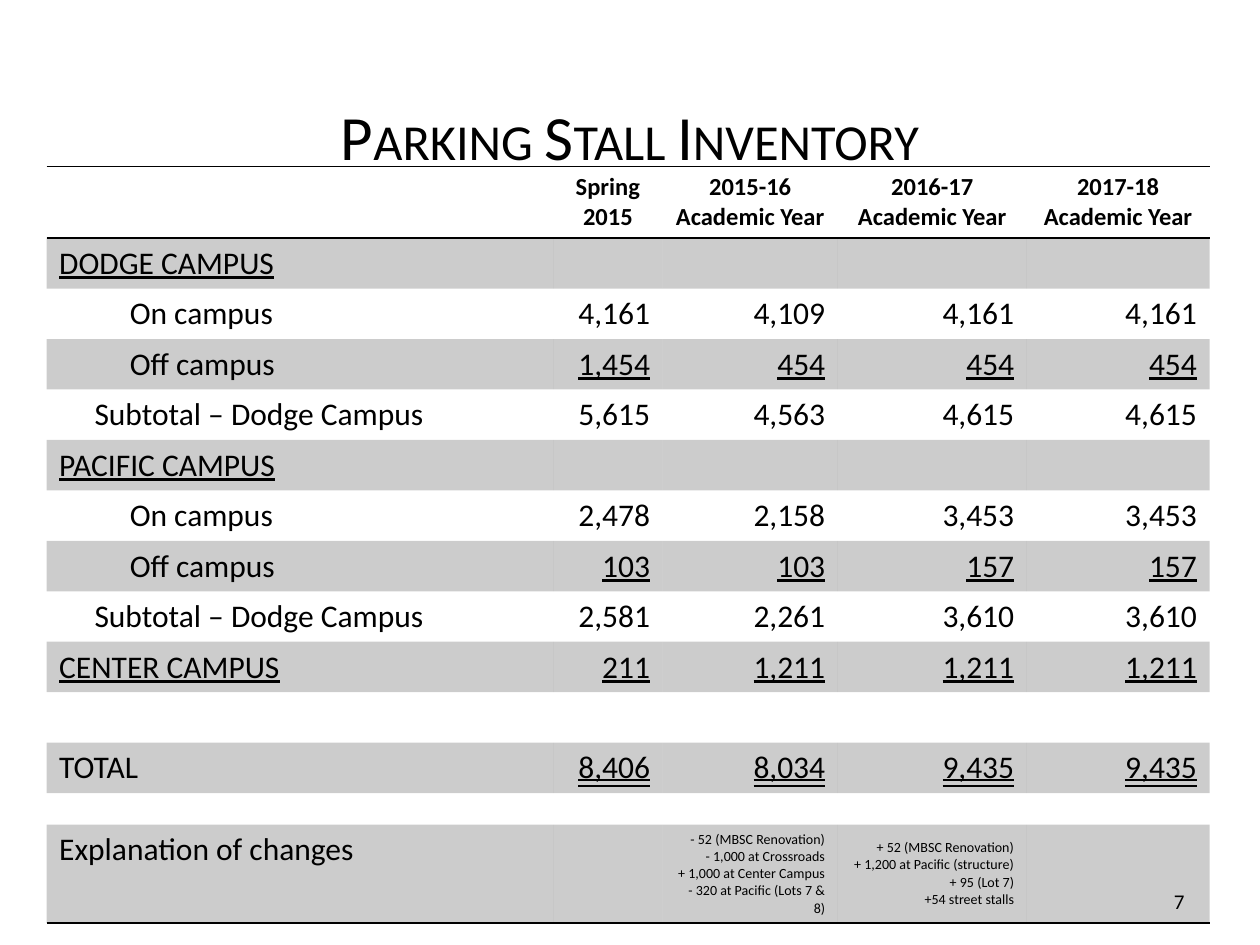
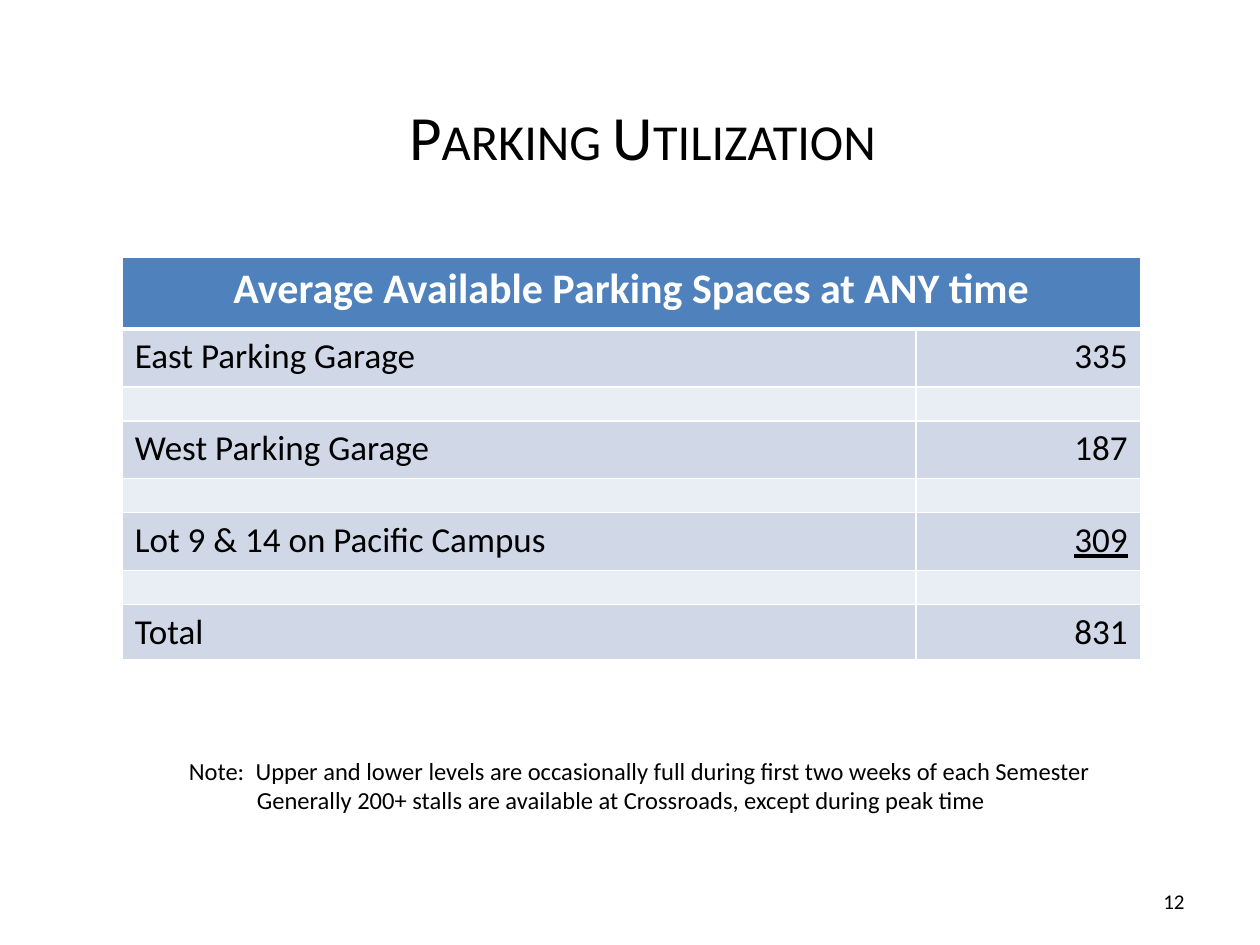
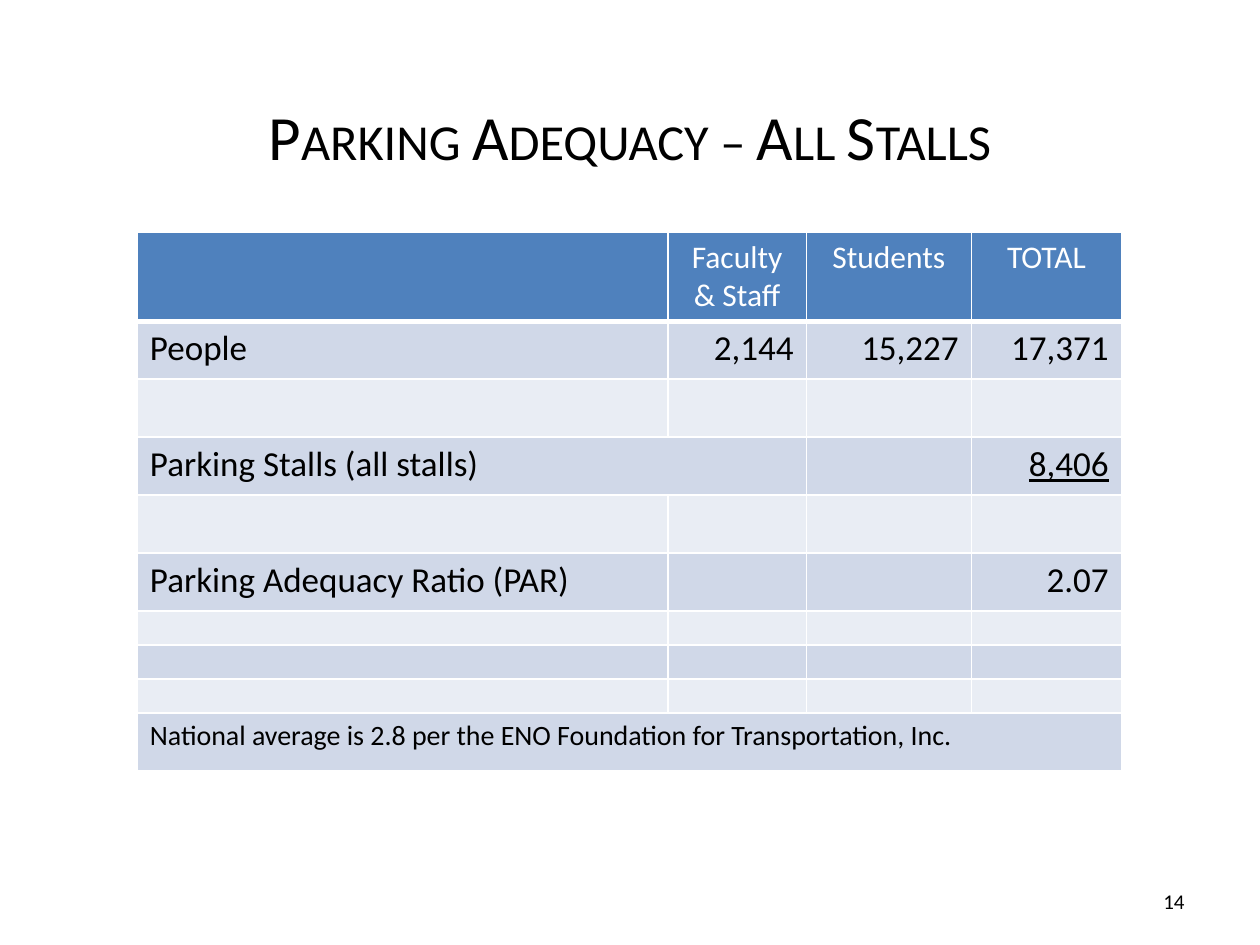
"""Build three slides on campus parking inventory, utilization and adequacy."""
import lxml.etree
import pptx
import pptx.dml.color
import pptx.enum.text
import pptx.oxml.ns
import pptx.util
from pptx.util import Inches

RGBColor = pptx.dml.color.RGBColor
Align = pptx.enum.text.PP_ALIGN
Anchor = pptx.enum.text.MSO_ANCHOR
Underline = pptx.enum.text.MSO_UNDERLINE
qn = pptx.oxml.ns.qn

BLACK = RGBColor(0x00, 0x00, 0x00)
WHITE = RGBColor(0xFF, 0xFF, 0xFF)
HEADER_BLUE = RGBColor(0x4F, 0x81, 0xBD)
BAND_DARK = RGBColor(0xD0, 0xD8, 0xE8)
BAND_LIGHT = RGBColor(0xE9, 0xED, 0xF4)
FONT = "Calibri"

INVENTORY_HEADS = ["", "Spring\n2015", "2015-16\nAcademic Year",
                   "2016-17\nAcademic Year", "2017-18\nAcademic Year"]
INVENTORY = [
    ["DODGE CAMPUS", "", "", "", ""],
    ["On campus", "4,161", "4,109", "4,161", "4,161"],
    ["Off campus", "1,454", "454", "454", "454"],
    ["Subtotal – Dodge Campus", "5,615", "4,563", "4,615", "4,615"],
    ["PACIFIC CAMPUS", "", "", "", ""],
    ["On campus", "2,478", "2,158", "3,453", "3,453"],
    ["Off campus", "103", "103", "157", "157"],
    ["Subtotal – Dodge Campus", "2,581", "2,261", "3,610", "3,610"],
    ["CENTER CAMPUS", "211", "1,211", "1,211", "1,211"],
    [""] * 5,
    ["TOTAL", "8,406", "8,034", "9,435", "9,435"],
    [""] * 5,
    ["Explanation of changes", "",
     "- 52 (MBSC Renovation)\n- 1,000 at Crossroads\n"
     "+ 1,000 at Center Campus\n- 320 at Pacific (Lots 7 & 8)",
     "+ 52 (MBSC Renovation)\n+ 1,200 at Pacific (structure)\n"
     "+ 95 (Lot 7)\n+54 street stalls", ""],
]
UTILIZATION = [
    ["East Parking Garage", "335"],
    ["", ""],
    ["West Parking Garage", "187"],
    ["", ""],
    ["Lot 9 & 14 on Pacific Campus", "309"],
    ["", ""],
    ["Total", "831"],
]
ADEQUACY = [
    ["People", "2,144", "15,227", "17,371"],
    [""] * 4,
    ["Parking Stalls (all stalls)", "", "", "8,406"],
    [""] * 4,
    ["Parking Adequacy Ratio (PAR)", "", "", "2.07"],
    [""] * 4,
    [""] * 4,
    [""] * 4,
]
NATIONAL_AVERAGE = "National average is 2.8 per the ENO Foundation for Transportation, Inc."


def write(frame, text, size=18, color=BLACK, align=Align.LEFT, bold=False,
          underline=None, small_caps=False):
    """Fill a text frame with one formatted paragraph per line of text."""
    for index, line in enumerate(text.split("\n")):
        para = frame.paragraphs[0] if index == 0 else frame.add_paragraph()
        para.alignment = align
        if not line:
            lxml.etree.SubElement(para._p, qn("a:endParaRPr"), sz=str(size * 100))
            continue
        span = para.add_run()
        span.text = line
        span.font.name = FONT
        span.font.size = pptx.util.Pt(size)
        span.font.color.rgb = color
        span.font.bold = bold
        span.font.underline = underline
        if small_caps:
            span.font._element.set("cap", "small")


def add_page(deck, title, number, title_left=0.5):
    """Add a title-only slide with its heading and page number."""
    page = deck.slides.add_slide(deck.slide_layouts[5])
    heading = page.shapes.title
    heading.left, heading.top = Inches(title_left), Inches(0.82)
    heading.width, heading.height = Inches(9), Inches(0.5)
    heading.text_frame.vertical_anchor = Anchor.MIDDLE
    write(heading.text_frame, title, size=36, align=Align.CENTER, small_caps=True)
    box = add_box(page, 7.17, 6.95, 2.33, 0.4)
    box.text_frame.vertical_anchor = Anchor.MIDDLE
    write(box.text_frame, number, size=12, align=Align.RIGHT)
    return page


def add_box(page, left, top, width, height):
    """Add an empty wrapping text box."""
    box = page.shapes.add_textbox(Inches(left), Inches(top), Inches(width), Inches(height))
    box.text_frame.word_wrap = True
    return box


def draw_border(cell, side, color, width):
    """Draw one cell border, or hide it when the width is zero."""
    line = lxml.etree.SubElement(cell._tc.get_or_add_tcPr(), qn("a:ln" + side),
                                 w=str(pptx.util.Pt(width)))
    if width:
        fill = lxml.etree.SubElement(line, qn("a:solidFill"))
        lxml.etree.SubElement(fill, qn("a:srgbClr"), val=str(color))
    else:
        lxml.etree.SubElement(line, qn("a:noFill"))


def fill_cell(cell, color, opacity=100):
    """Fill a cell with a colour, or leave it clear when there is none."""
    if color is None:
        cell.fill.background()
        return
    cell.fill.solid()
    cell.fill.fore_color.rgb = color
    if opacity < 100:
        tint = cell._tc.tcPr.find(qn("a:solidFill")).find(qn("a:srgbClr"))
        lxml.etree.SubElement(tint, qn("a:alpha"), val=str(opacity * 1000))


def add_grid(page, left, top, columns, rows, line_color, line_width, edges):
    """Add a plain table; edges maps a horizontal rule's index to its width."""
    table = page.shapes.add_table(len(rows), len(columns), Inches(left), Inches(top),
                                  Inches(sum(columns)), Inches(sum(rows))).table
    table.first_row = table.horz_banding = False
    for column, width in zip(table.columns, columns):
        column.width = Inches(width)
    for index, (row, height) in enumerate(zip(table.rows, rows)):
        row.height = Inches(height)
        widths = {"L": line_width, "R": line_width,
                  "T": edges.get(index, line_width),
                  "B": edges.get(index + 1, line_width)}
        for cell in row.cells:
            for side, width in widths.items():
                draw_border(cell, side, line_color, width)
    return table


def add_blue_grid(page, left, top, columns, rows):
    """Add a table with a blue header row and banded rows under it."""
    table = add_grid(page, left, top, columns, rows, WHITE, 1, {1: 3})
    for index, row in enumerate(table.rows):
        band = BAND_DARK if index % 2 else BAND_LIGHT
        for cell in row.cells:
            fill_cell(cell, band if index else HEADER_BLUE)
    return table


def write_blue_rows(table, records, rows, underlined):
    """Write labels and right-aligned values below the header row."""
    for index, record in enumerate(records, 1):
        empty_size = 10 if rows[index] < 0.4 else 18
        for column, text in enumerate(record):
            write(table.cell(index, column).text_frame, text,
                  size=20 if text else empty_size,
                  align=Align.RIGHT if column else Align.LEFT,
                  underline=True if text == underlined else None)


def write_inventory_row(row, record, height):
    """Write one inventory row with the indent and underline its label calls for."""
    label = record[0]
    is_campus = label.endswith("CAMPUS")
    is_explanation = label.startswith("Explanation")
    underline = None
    if label == "TOTAL":
        underline = Underline.DOUBLE_LINE
    elif is_campus or label == "Off campus":
        underline = True
    for column, (cell, text) in enumerate(zip(row.cells, record)):
        if column == 0:
            indent = 0.28 if label.startswith("Subtotal") else 0.56 if label.endswith("campus") else 0
            cell.margin_left = Inches(0.1 + indent)
            write(cell.text_frame, text, size=18 if height > 0.3 else 8,
                  underline=True if is_campus else None)
            continue
        if is_explanation:
            cell.vertical_anchor = Anchor.MIDDLE
        write(cell.text_frame, text, size=8 if is_explanation or height < 0.3 else 18,
              align=Align.RIGHT, underline=underline)


def build_inventory(deck):
    """Build the stall inventory slide."""
    page = add_page(deck, "Parking Stall Inventory", "7")
    rows = [0.57] + [0.4] * 11 + [0.25, 0.78]
    table = add_grid(page, 0.37, 1.32, [4.02, 0.87, 1.39, 1.5, 1.45], rows, BLACK, 0,
                     {0: 1, 1: 1, len(rows): 1})
    for index, row in enumerate(table.rows):
        for cell in row.cells:
            fill_cell(cell, BLACK if index % 2 else None, opacity=20)
    for cell, text in zip(table.rows[0].cells, INVENTORY_HEADS):
        write(cell.text_frame, text, size=14, align=Align.CENTER, bold=True)
    for index, record in enumerate(INVENTORY, 1):
        write_inventory_row(table.rows[index], record, rows[index])


def build_utilization(deck):
    """Build the utilization slide with its note."""
    page = add_page(deck, "Parking Utilization", "12", title_left=0.6)
    rows = [0.57] + [0.46, 0.27] * 3 + [0.44]
    table = add_blue_grid(page, 0.97, 2.04, [6.3, 1.78], rows)
    table.cell(0, 0).merge(table.cell(0, 1))
    write(table.cell(0, 0).text_frame, "Average Available Parking Spaces at ANY time",
          size=24, color=WHITE, align=Align.CENTER, bold=True)
    write_blue_rows(table, UTILIZATION, rows, "309")
    note = add_box(page, 1.4, 5.95, 7.42, 0.57).text_frame
    note.word_wrap = False
    write(note, "Note:\tUpper and lower levels are occasionally full during first two weeks "
          "of each Semester\nGenerally 200+ stalls are available at Crossroads, "
          "except during peak time", size=14)
    for para, margin, hanging in zip(note.paragraphs, (0.53, 0.54), (-0.53, 0)):
        settings = para._p.get_or_add_pPr()
        settings.set("marL", str(Inches(margin)))
        settings.set("indent", str(Inches(hanging)))


def build_adequacy(deck):
    """Build the adequacy ratio slide."""
    page = add_page(deck, "Parking Adequacy – All Stalls", "14")
    rows = [0.71] + [0.46] * 5 + [0.27] * 3 + [0.46]
    table = add_blue_grid(page, 1.09, 1.84, [4.21, 1.1, 1.31, 1.19], rows)
    table.cell(3, 0).merge(table.cell(3, 1))
    table.cell(9, 0).merge(table.cell(9, 3))
    for cell, text in zip(table.rows[0].cells, ["", "Faculty & Staff", "Students", "TOTAL"]):
        write(cell.text_frame, text, color=WHITE, align=Align.CENTER)
    write_blue_rows(table, ADEQUACY, rows, "8,406")
    write(table.cell(9, 0).text_frame, NATIONAL_AVERAGE, size=16)


def main():
    """Build the deck and save it."""
    deck = pptx.Presentation()
    deck.slide_width, deck.slide_height = Inches(10), Inches(7.5)
    build_inventory(deck)
    build_utilization(deck)
    build_adequacy(deck)
    deck.save("out.pptx")


if __name__ == "__main__":
    main()
